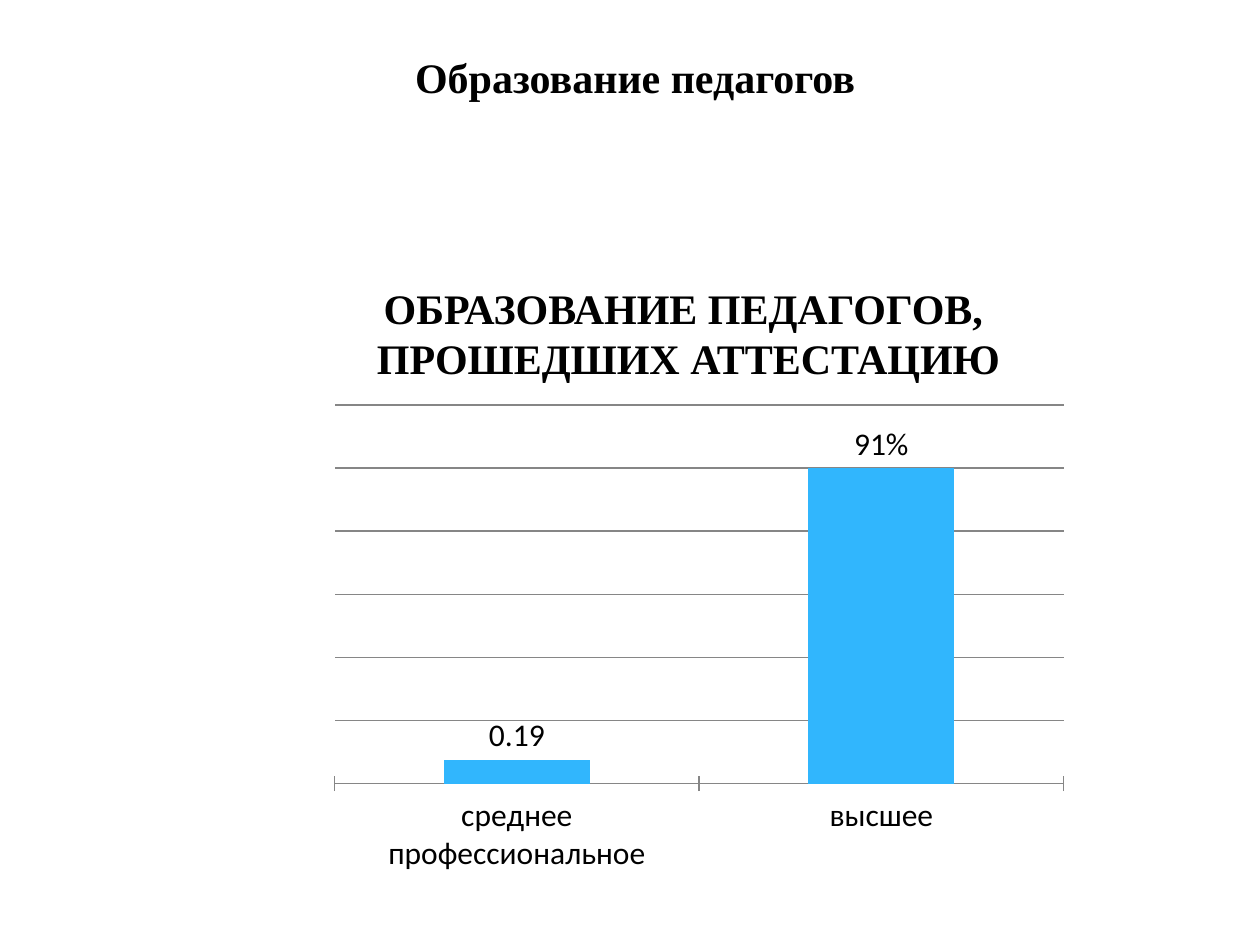
from dataclasses import dataclass

from pptx import Presentation
from pptx.chart.data import CategoryChartData
from pptx.dml.color import RGBColor
from pptx.enum.chart import XL_CHART_TYPE, XL_LABEL_POSITION, XL_TICK_MARK
from pptx.enum.text import MSO_ANCHOR, PP_ALIGN
from pptx.oxml import parse_xml
from pptx.oxml.ns import nsdecls
from pptx.util import Inches, Pt

COLUMN = XL_CHART_TYPE.COLUMN_CLUSTERED
OUTSIDE_END = XL_LABEL_POSITION.OUTSIDE_END
TICK_CROSS = XL_TICK_MARK.CROSS
TOP, BOTTOM = MSO_ANCHOR.TOP, MSO_ANCHOR.BOTTOM
CENTER = PP_ALIGN.CENTER

BLACK = RGBColor(0x00, 0x00, 0x00)
GRAY = RGBColor(0x86, 0x86, 0x86)
BLUE = RGBColor(0x31, 0xB6, 0xFD)


@dataclass(frozen=True)
class Box:
    left: float
    top: float
    width: float
    height: float

    def lengths(self) -> tuple:
        return tuple(Inches(n) for n in (self.left, self.top, self.width, self.height))


@dataclass(frozen=True)
class Heading:
    text: str
    box: Box
    anchor: MSO_ANCHOR


HEADINGS = (
    Heading("ОБРАЗОВАНИЕ ПЕДАГОГОВ, \vПРОШЕДШИХ АТТЕСТАЦИЮ", Box(1.64, 2.19, 7.65, 4.14), TOP),
    Heading("Образование педагогов", Box(0.79, 0.23, 8.5, 0.63), BOTTOM),
)
CHART_BOX = Box(1.75, 2.97, 6.92, 4.14)
PLOT_SHARES = {"x": 0.131, "y": 0.059, "w": 0.836, "h": 0.726}
EDUCATION = {"среднее профессиональное": 0.19, "высшее": 2.5}


def style_font(font, name: str, size: int, bold: bool = False) -> None:
    font.name, font.size, font.bold = name, Pt(size), bold
    font.color.rgb = BLACK


def add_heading(slide, heading: Heading) -> None:
    frame = slide.shapes.add_textbox(*heading.box.lengths()).text_frame
    frame.word_wrap = True
    frame.vertical_anchor = heading.anchor
    frame.text = heading.text
    paragraph = frame.paragraphs[0]
    paragraph.alignment = CENTER
    style_font(paragraph.font, "Times New Roman", 24, bold=True)


def set_plot_area(chart, shares: dict) -> None:
    """Fix the inner plot area as shares of the chart's size."""
    modes = '<c:xMode val="edge"/><c:yMode val="edge"/>'
    values = "".join(f'<c:{key} val="{share}"/>' for key, share in shares.items())
    layout = parse_xml(
        f'<c:layout {nsdecls("c")}><c:manualLayout><c:layoutTarget val="inner"/>'
        f"{modes}{values}</c:manualLayout></c:layout>"
    )
    plot_area = chart.element.chart.plotArea
    for old_layout in plot_area.findall(layout.tag):
        plot_area.remove(old_layout)
    plot_area.insert(0, layout)


def add_education_chart(slide) -> None:
    data = CategoryChartData()
    data.categories = list(EDUCATION)
    data.add_series("Series 1", list(EDUCATION.values()))
    chart = slide.shapes.add_chart(COLUMN, *CHART_BOX.lengths(), data).chart
    chart.has_legend = chart.has_title = False
    style_font(chart.font, "Calibri", 18)
    set_plot_area(chart, PLOT_SHARES)

    chart.category_axis.major_tick_mark = TICK_CROSS
    chart.category_axis.format.line.color.rgb = GRAY
    value_axis = chart.value_axis
    value_axis.visible = False
    value_axis.minimum_scale, value_axis.maximum_scale = 0, 3
    value_axis.major_unit = 0.5
    value_axis.has_major_gridlines = True
    value_axis.major_gridlines.format.line.color.rgb = GRAY

    plot = chart.plots[0]
    plot.gap_width = 150
    plot.vary_by_categories = False
    series = plot.series[0]
    series.format.fill.solid()
    series.format.fill.fore_color.rgb = BLUE
    series.data_labels.show_value = True
    series.data_labels.position = OUTSIDE_END

    higher_label = series.points[1].data_label
    higher_label.text_frame.text = "91%"
    higher_label.position = OUTSIDE_END
    style_font(higher_label.text_frame.paragraphs[0].runs[0].font, "Calibri", 18)


def main() -> None:
    presentation = Presentation()
    presentation.slide_width, presentation.slide_height = Inches(10), Inches(7.5)
    slide = presentation.slides.add_slide(presentation.slide_layouts[6])
    for heading in HEADINGS:
        add_heading(slide, heading)
    add_education_chart(slide)
    presentation.save("out.pptx")


if __name__ == "__main__":
    main()
